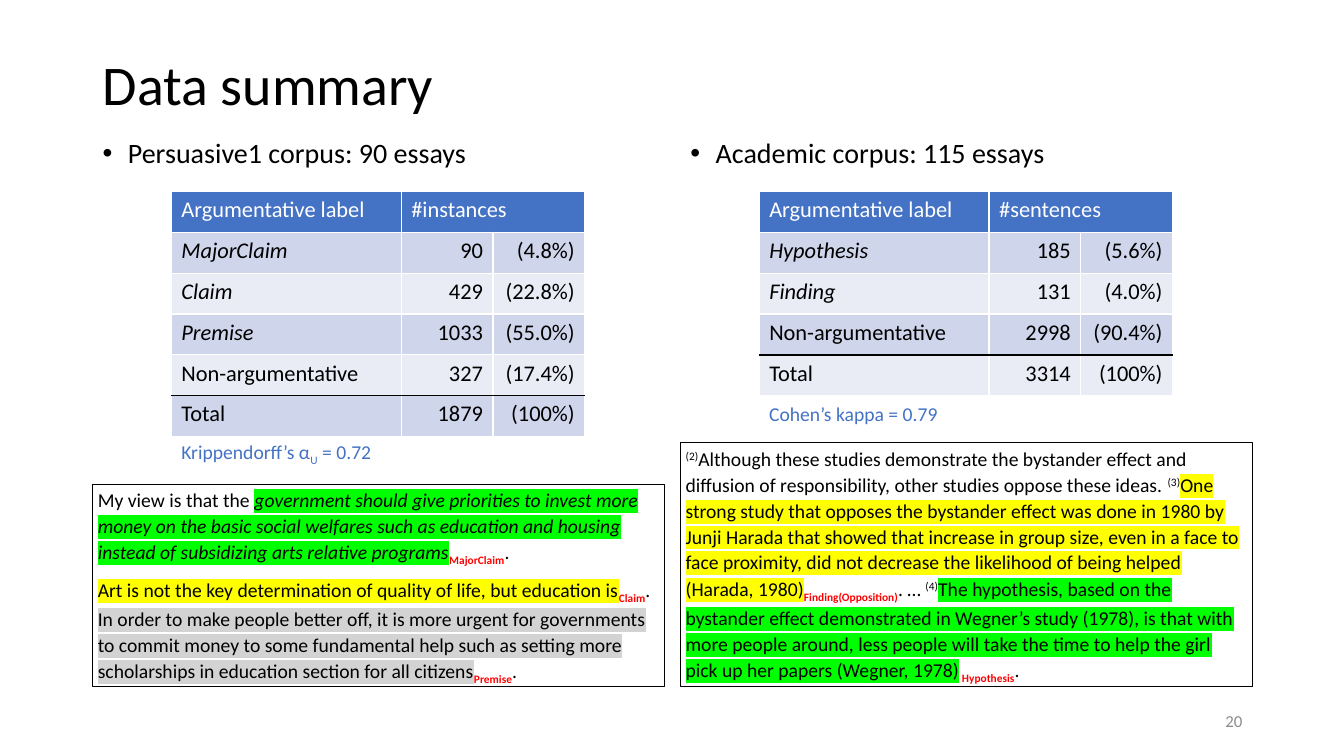
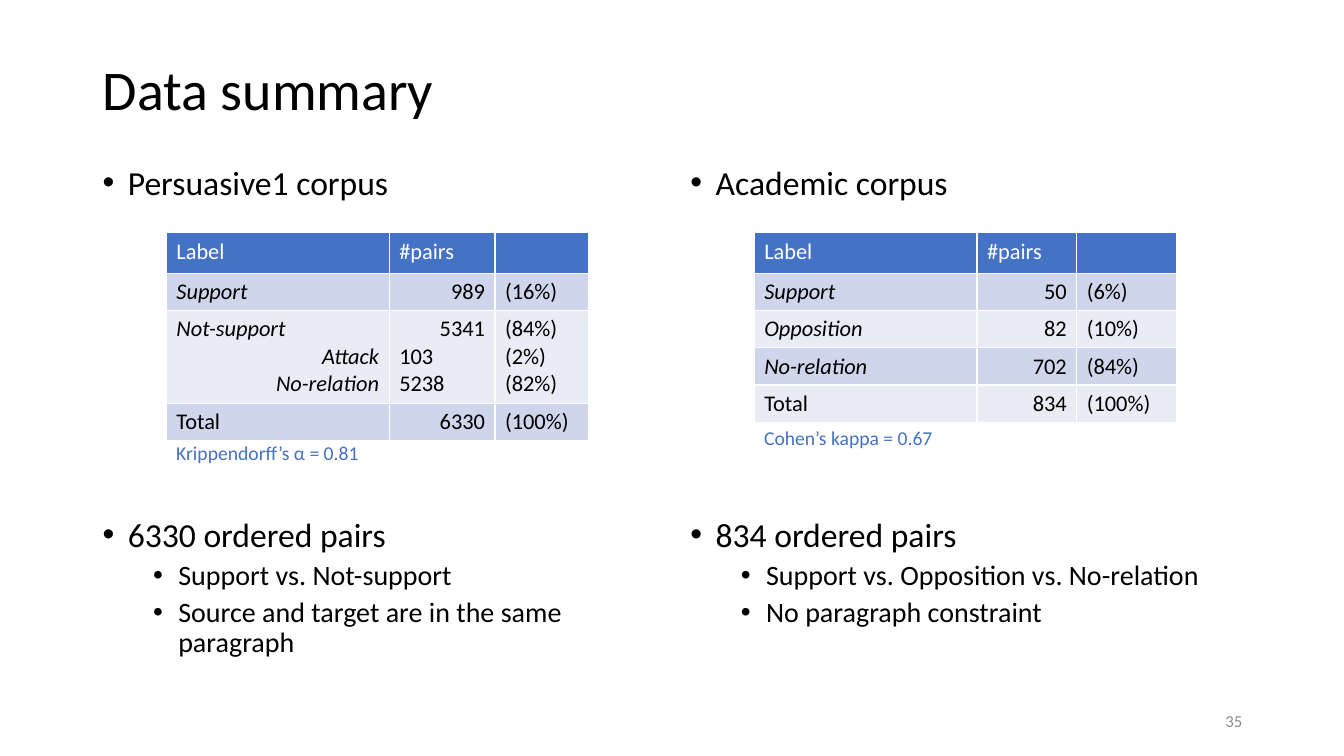
from lxml.etree import SubElement
from pptx import Presentation
from pptx.dml.color import RGBColor
from pptx.enum.shapes import MSO_SHAPE
from pptx.enum.text import MSO_ANCHOR, PP_ALIGN
from pptx.oxml.ns import qn
from pptx.util import Inches, Pt

COLORS = {
    "ink": "000000",
    "white": "FFFFFF",
    "accent": "4472C4",
    "band_dark": "CFD5EA",
    "band_light": "E9EBF5",
    "number": "8C8C8C",
    "label": "FF0000",
    "green": "00FF00",
    "yellow": "FFFF00",
    "gray": "D3D3D3",
}
FONT = "Calibri"
MARGIN = 0.92
COLUMN_STEP = 5.83
COLUMN_WIDTH = 5.67
ALIGN = {"l": PP_ALIGN.LEFT, "r": PP_ALIGN.RIGHT}
SUBLINE_ALIGNS = "rll"
UPRIGHT_ROWS = ("Total", "Non-argumentative")

LABEL = {"color": "label", "bold": True, "baseline": -25}
GREEN = {"highlight": "green"}
YELLOW = {"highlight": "yellow"}
GRAY = {"highlight": "gray"}
SUPER = {"baseline": 30}
SUB = {"baseline": -25}


def rgb(name):
    return RGBColor.from_string(COLORS[name])


def style_run(run, size, color="ink", bold=False, italic=False, highlight=None, baseline=0):
    font = run.font
    font.name, font.size, font.bold, font.italic = FONT, Pt(size), bold, italic
    font.color.rgb = rgb(color)
    properties = font._element
    if baseline:
        properties.set("baseline", str(baseline * 1000))
    if highlight:
        mark = SubElement(properties, qn("a:highlight"))
        SubElement(mark, qn("a:srgbClr"), val=COLORS[highlight])
        properties.find(qn("a:solidFill")).addnext(mark)


def add_bullet(paragraph, indent):
    properties = paragraph._p.get_or_add_pPr()
    properties.set("marL", str(Inches(indent)))
    properties.set("indent", str(-Inches(0.25)))
    SubElement(properties, qn("a:buFont"), typeface="Arial")
    SubElement(properties, qn("a:buChar"), char="•")


def write(frame, text, align="l", spacing=1.0, before=0, after=0, bullet=None, **style):
    """Text is a string or a list of (words, changes) runs."""
    paragraph = frame.paragraphs[0]
    if paragraph.runs:
        paragraph = frame.add_paragraph()
    paragraph.alignment = ALIGN[align]
    paragraph.line_spacing = spacing
    paragraph.space_before, paragraph.space_after = Pt(before), Pt(after)
    if bullet:
        add_bullet(paragraph, bullet)
    for words, changes in [(text, {})] if isinstance(text, str) else text:
        run = paragraph.add_run()
        run.text = words
        style_run(run, **{**style, **changes})


def text_area(slide, left, top, width, height, anchor=MSO_ANCHOR.MIDDLE):
    area = slide.shapes.add_textbox(Inches(left), Inches(top), Inches(width), Inches(height))
    frame = area.text_frame
    frame.word_wrap = True
    frame.vertical_anchor = anchor
    return frame


def add_bullets(slide, column, top, height, items, size):
    left = MARGIN + column * COLUMN_STEP
    frame = text_area(slide, left, top, COLUMN_WIDTH, height, MSO_ANCHOR.TOP)
    write(frame, items[0], size=size, spacing=0.9, before=10, bullet=0.25)
    for item in items[1:]:
        write(frame, item, size=20, spacing=0.9, before=5, bullet=0.75)


def add_agreement(slide, left, top, text):
    write(text_area(slide, left, top, 2.6, 0.34), text, size=14, color="accent")


def add_excerpt(slide, column, top, paragraphs):
    bottom = 6.81
    excerpt = slide.shapes.add_shape(
        MSO_SHAPE.RECTANGLE, Inches(MARGIN + column * COLUMN_STEP), Inches(top),
        Inches(COLUMN_WIDTH), Inches(bottom - top))
    excerpt.shadow.inherit = False
    excerpt.fill.background()
    excerpt.line.color.rgb = rgb("ink")
    excerpt.line.width = Pt(0.75)
    frame = excerpt.text_frame
    frame.word_wrap = True
    frame.vertical_anchor = MSO_ANCHOR.MIDDLE
    frame.margin_left = frame.margin_right = Inches(0.05)
    for runs in paragraphs:
        write(frame, runs, size=14, spacing=1.1, after=6)


def set_borders(cell, **ruled):
    properties = cell._tc.get_or_add_tcPr()
    for position, side in enumerate("LRTB"):
        color, width = ("ink", 1.5) if ruled.get(side) else ("white", 1)
        line = SubElement(properties, qn(f"a:ln{side}"), w=str(Pt(width)))
        fill = SubElement(line, qn("a:solidFill"))
        SubElement(fill, qn("a:srgbClr"), val=COLORS[color])
        properties.insert(position, line)


def row_fill(row):
    if row == 0:
        return "accent"
    return "band_dark" if row % 2 else "band_light"


def add_counts(slide, left, top, widths, row_height, rows, aligns, ruled_total=False):
    heights = [row_height + 0.275 * rows_text[0].count("\n") for rows_text in rows]
    counts = slide.shapes.add_table(
        len(rows), len(widths), Inches(left), Inches(top),
        Inches(sum(widths)), Inches(sum(heights))).table
    for column, width in zip(counts.columns, widths):
        column.width = Inches(width)
    last = len(rows) - 1
    for r, texts in enumerate(rows):
        counts.rows[r].height = Inches(heights[r])
        for c, text in enumerate(texts):
            cell = counts.cell(r, c)
            cell.fill.solid()
            cell.fill.fore_color.rgb = rgb(row_fill(r))
            set_borders(cell, T=ruled_total and r == last, B=ruled_total and r == last - 1)
            italic = r > 0 and c == 0 and text not in UPRIGHT_ROWS
            for n, line in enumerate(text.split("\n")):
                align = SUBLINE_ALIGNS[c] if n else aligns[c] if r else "l"
                write(cell.text_frame, line, align=align, size=16, italic=italic,
                      color="ink" if r else "white")
    if ruled_total:
        counts.cell(0, 1).merge(counts.cell(0, 2))


def start_slide(deck, number, title_height):
    slide = deck.slides.add_slide(deck.slide_layouts[6])
    write(text_area(slide, MARGIN, 0.4, 11.5, title_height), "Data summary", size=40, spacing=0.9)
    write(text_area(slide, 9.42, 6.95, 3, 0.4), number, align="r", size=12, color="number")
    return slide


def label_slide(deck):
    slide = start_slide(deck, "20", 0.93)
    columns = [
        ("Persuasive1 corpus: 90 essays",
         [("Argumentative label", "#instances", ""),
          ("MajorClaim", "90", "(4.8%)"),
          ("Claim", "429", "(22.8%)"),
          ("Premise", "1033", "(55.0%)"),
          ("Non-argumentative", "327", "(17.4%)"),
          ("Total", "1879", "(100%)")],
         [("Krippendorff’s α", {}), ("U", SUB), (" = 0.72", {})], 4.33, 4.81,
         [[("My view is that the ", {}),
           ("government should give priorities to invest more money on the basic social welfares "
            "such as education and housing instead of subsidizing arts relative programs",
            {**GREEN, "italic": True}),
           ("MajorClaim", LABEL), (".", {})],
          [("Art is not the key determination of quality of life, but education is", YELLOW),
           ("Claim", LABEL), (". ", {}),
           ("In order to make people better off, it is more urgent for governments to commit "
            "money to some fundamental help such as setting more scholarships in education "
            "section for all citizens", GRAY),
           ("Premise", LABEL), (".", {})]]),
        ("Academic corpus: 115 essays",
         [("Argumentative label", "#sentences", ""),
          ("Hypothesis", "185", "(5.6%)"),
          ("Finding", "131", "(4.0%)"),
          ("Non-argumentative", "2998", "(90.4%)"),
          ("Total", "3314", "(100%)")],
         "Cohen’s kappa = 0.79", 3.93, 4.39,
         [[("(2)", SUPER),
           ("Although these studies demonstrate the bystander effect and diffusion of "
            "responsibility, other studies oppose these ideas. ", {}),
           ("(3)", SUPER),
           ("One strong study that opposes the bystander effect was done in 1980 by Junji Harada "
            "that showed that increase in group size, even in a face to face proximity, did not "
            "decrease the likelihood of being helped (Harada, 1980)", YELLOW),
           ("Finding(Opposition)", LABEL), (". … ", {}), ("(4)", SUPER),
           ("The hypothesis, based on the bystander effect demonstrated in Wegner’s study (1978), "
            "is that with more people around, less people will take the time to help the girl "
            "pick up her papers (Wegner, 1978)", GREEN),
           (" Hypothesis", LABEL), (".", {})]]),
    ]
    for column, (heading, rows, agreement, agreement_top, excerpt_top, excerpt) in enumerate(columns):
        left = 1.7 + column * COLUMN_STEP
        add_bullets(slide, column, 1.33, 0.5, [heading], 20)
        add_counts(slide, left, 1.9, (2.28, 0.91, 0.91), 0.405, rows, "lrr", ruled_total=True)
        add_excerpt(slide, column, excerpt_top, excerpt)
        add_agreement(slide, left, agreement_top, agreement)


def pair_slide(deck):
    slide = start_slide(deck, "35", 1.04)
    header = ("Label", "#pairs", "")
    columns = [
        ("Persuasive1 corpus", (2.21, 1.05, 0.93),
         [header,
          ("Support", "989", "(16%)"),
          ("Not-support\nAttack\nNo-relation", "5341\n103\n5238", "(84%)\n(2%)\n(82%)"),
          ("Total", "6330", "(100%)")],
         "Krippendorff’s α = 0.81", 4.32,
         ["6330 ordered pairs", "Support vs. Not-support",
          "Source and target are in the same paragraph"]),
        ("Academic corpus", (2.21, 0.99, 0.99),
         [header,
          ("Support", "50", "(6%)"),
          ("Opposition", "82", "(10%)"),
          ("No-relation", "702", "(84%)"),
          ("Total", "834", "(100%)")],
         "Cohen’s kappa = 0.67", 4.17,
         ["834 ordered pairs", "Support vs. Opposition vs. No-relation",
          "No paragraph constraint"]),
    ]
    for column, (heading, widths, rows, agreement, agreement_top, pairs) in enumerate(columns):
        left = 1.65 + column * COLUMN_STEP
        add_bullets(slide, column, 1.6, 0.6, [heading], 24)
        add_bullets(slide, column, 5.09, 1.67, pairs, 24)
        add_counts(slide, left, 2.31, widths, 0.37, rows, "lrl")
        add_agreement(slide, left, agreement_top, agreement)


def main():
    deck = Presentation()
    deck.slide_width, deck.slide_height = Inches(13.33), Inches(7.5)
    label_slide(deck)
    pair_slide(deck)
    deck.save("out.pptx")


if __name__ == "__main__":
    main()
